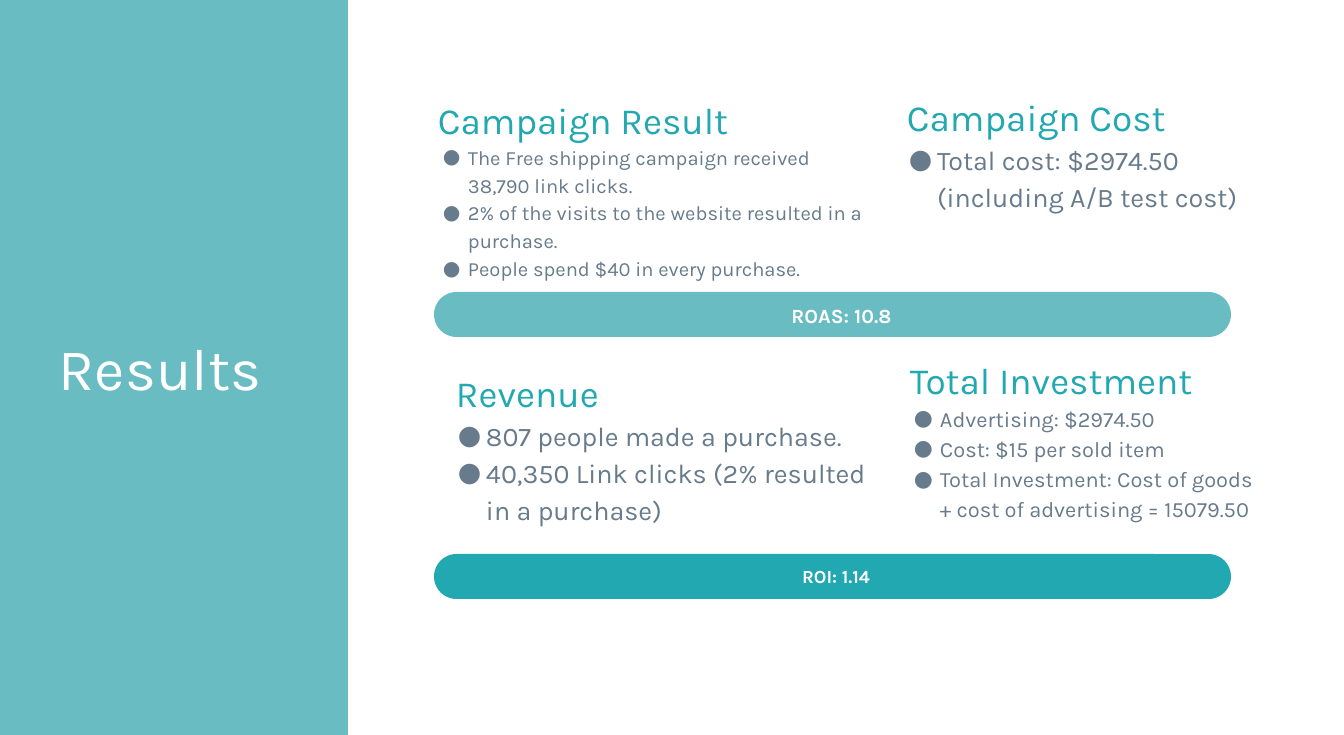
from lxml import etree
from pptx import Presentation
from pptx import util as u
from pptx.dml.color import RGBColor
from pptx.enum import shapes, text
from pptx.oxml.ns import qn

PX = 15114  # EMU in one px
THEME = {
    "font": "Karla",
    "aqua": "69BCC1", "teal": "21A8B0", "slate": "677B8C", "white": "FFFFFF",
    "title": 70, "heading": 44, "large": 32, "medium": 26, "small": 24, "tiny": 22,
}
INSET = 13
BULLET_INDENT = 30

deck = Presentation()
deck.slide_width, deck.slide_height = 1344 * PX, 735 * PX
slide = deck.slides.add_slide(deck.slide_layouts[6])


def add_block(box, colour=None, outline=shapes.MSO_SHAPE.RECTANGLE):
    """Filled shape when a colour is given, otherwise a wrapping text box."""
    place = [n * PX for n in box]
    if colour is None:
        block = slide.shapes.add_textbox(*place)
        frame_format = {"word_wrap": True}
        for side in ("left", "top", "right", "bottom"):
            frame_format[f"margin_{side}"] = INSET * PX
        for name, value in frame_format.items():
            setattr(block.text_frame, name, value)
        return block.text_frame
    block = slide.shapes.add_shape(outline, *place)
    block.shadow.inherit = False
    block.fill.solid()
    block.fill.fore_color.rgb = RGBColor.from_string(THEME[colour])
    block.line.fill.background()
    return block


def write(paragraph, words, size, colour, bold=False):
    run = paragraph.add_run()
    run.text = words
    font_format = {"name": THEME["font"], "size": u.Pt(THEME[size]), "bold": bold}
    for name, value in font_format.items():
        setattr(run.font, name, value)
    run.font.color.rgb = RGBColor.from_string(THEME[colour])


# Sidebar with the title
add_block((0, 0, 348, 735), "aqua")
title = add_block((46, 247, 274, 240))
title.vertical_anchor = text.MSO_ANCHOR.MIDDLE
write(title.paragraphs[0], "Results", "title", "white")

# Ratio bars and their labels
ratios = [
    (292, "aqua", (481, 298, 721, 34), "ROAS: 10.8", "small"),
    (554, "teal", (423, 559, 826, 34), "ROI: 1.14", "tiny"),
]
for top, colour, label_box, words, size in ratios:
    bar = add_block((434, top, 797, 45), colour, shapes.MSO_SHAPE.ROUNDED_RECTANGLE)
    bar.adjustments[0] = 0.5
    label = add_block(label_box)
    label.vertical_anchor = text.MSO_ANCHOR.MIDDLE
    label.paragraphs[0].alignment = text.PP_ALIGN.CENTER
    write(label.paragraphs[0], words, size, "white", bold=True)

# Four sections: box, heading, bullet size, hanging indent, bullets
sections = [
    ((425, 62, 457, 224), "Campaign Result", "small", 25, [
        "The Free shipping campaign received 38,790 link clicks.",
        "2% of the visits to the website resulted in a purchase.",
        "People spend $40 in every purchase.",
    ]),
    ((894, 59, 405, 169), "Campaign Cost", "large", 28, [
        "Total cost: $2974.50 (including A/B test cost)",
    ]),
    ((443, 335, 457, 224), "Revenue", "large", 28, [
        "807 people made a purchase.",
        "40,350 Link clicks (2% resulted in a purchase)",
    ]),
    ((897, 322, 379, 224), "Total Investment", "medium", 26, [
        "Advertising: $2974.50",
        "Cost: $15 per sold item",
        "Total Investment: Cost of goods + cost of advertising = 15079.50",
    ]),
]
for box, heading, size, hanging, bullets in sections:
    section = add_block(box)
    section.paragraphs[0].line_spacing = 1.5
    write(section.paragraphs[0], heading, "heading", "teal")
    for words in bullets:
        point = section.add_paragraph()
        properties = point._p.get_or_add_pPr()
        properties.set("marL", str(BULLET_INDENT * PX))
        properties.set("indent", str(-hanging * PX))
        bullet_colour = etree.SubElement(properties, qn("a:buClr"))
        etree.SubElement(bullet_colour, qn("a:srgbClr"), val=THEME["slate"])
        etree.SubElement(properties, qn("a:buFont"), typeface=THEME["font"])
        etree.SubElement(properties, qn("a:buChar"), char="●")
        point.line_spacing = 1.15
        write(point, words, size, "slate")

deck.save("out.pptx")
